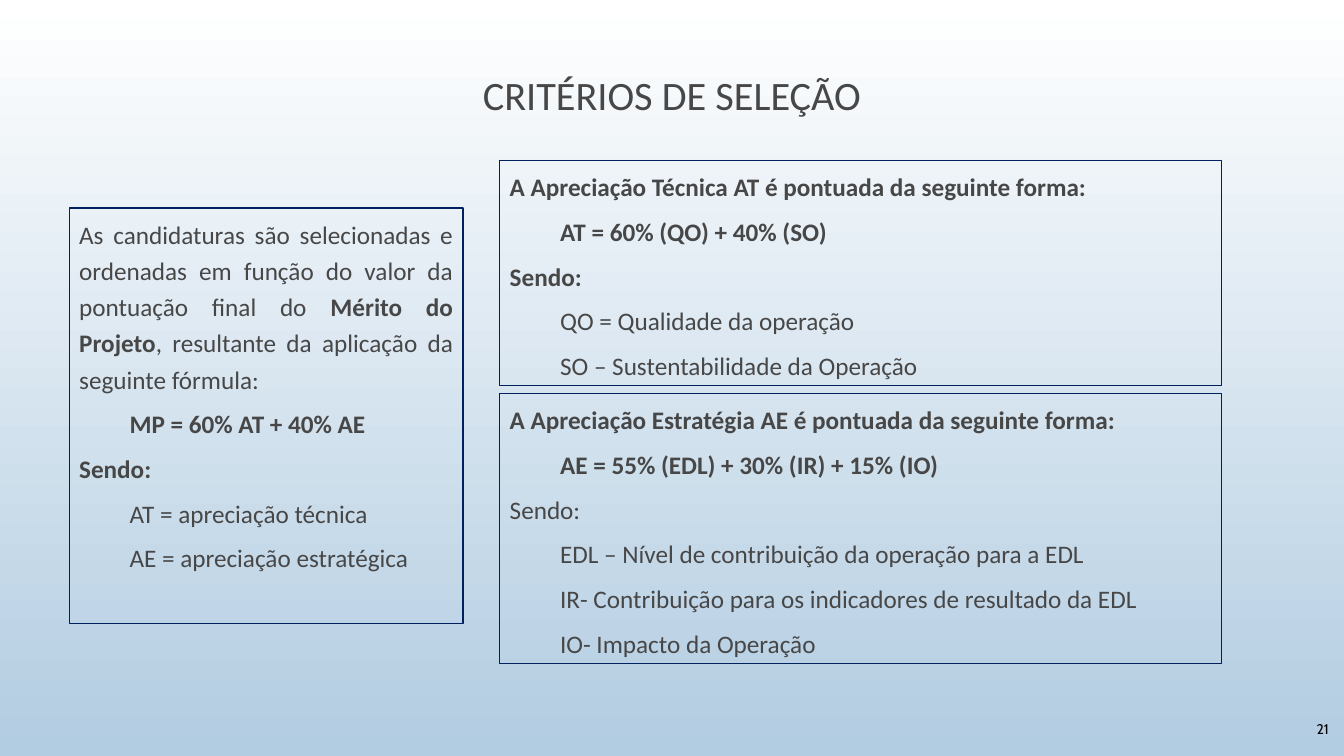
from pptx import Presentation
from pptx.dml.color import RGBColor
from pptx.enum.shapes import MSO_SHAPE
from pptx.enum.text import MSO_ANCHOR, MSO_AUTO_SIZE, PP_ALIGN
from pptx.util import Emu, Pt

PX = 9525
RECTANGLE = MSO_SHAPE.RECTANGLE
TOP, MIDDLE = MSO_ANCHOR.TOP, MSO_ANCHOR.MIDDLE
FIXED_SIZE = MSO_AUTO_SIZE.NONE
CENTER, RIGHT, JUSTIFY = PP_ALIGN.CENTER, PP_ALIGN.RIGHT, PP_ALIGN.JUSTIFY

GREY, NAVY, BLACK = "474747", "002060", "000000"
INDENT = 48
RIGHT_LEFT, RIGHT_WIDTH = 476, 687

# Each paragraph: indented, bold, text
AT_LINES = [
    (False, True, "A Apreciação Técnica AT é pontuada da seguinte forma:"),
    (True, True, "AT = 60% (QO) + 40% (SO)"),
    (False, True, "Sendo:"),
    (True, False, "QO = Qualidade da operação"),
    (True, False, "SO – Sustentabilidade da Operação"),
]
AE_LINES = [
    (False, True, "A Apreciação Estratégia AE é pontuada da seguinte forma:"),
    (True, True, "AE = 55% (EDL) + 30% (IR) + 15% (IO)"),
    (False, False, "Sendo:"),
    (True, False, "EDL – Nível de contribuição da operação para a EDL"),
    (True, False, "IR- Contribuição para os indicadores de resultado da EDL"),
    (True, False, "IO- Impacto da Operação"),
]
MERIT_LINES = [
    (False, False, "As candidaturas são selecionadas e ordenadas em função do "
                   "valor da pontuação final do **Mérito do Projeto**, "
                   "resultante da aplicação da seguinte fórmula:"),
    (True, True, "MP = 60% AT + 40% AE"),
    (False, True, "Sendo:"),
    (True, False, "AT = apreciação técnica"),
    (True, False, "AE = apreciação estratégica"),
]


def px(length):
    return Emu(length * PX)


def color(value):
    return RGBColor.from_string(value)


def set_font(font, name, size, value):
    font.name = name
    font.size = Pt(size)
    font.color.rgb = color(value)


def paint_background(page):
    fill = page.background.fill
    fill.gradient()
    fill.gradient_angle = 270
    for stop, (position, value) in zip(fill.gradient_stops, [(0, "FFFFFF"), (1, "B2CCE1")]):
        stop.position = position
        stop.color.rgb = color(value)


def add_title(page, text):
    title = page.shapes.title
    title.left, title.top, title.width, title.height = map(px, (96, 65, 1088, 55))
    frame = title.text_frame
    frame.text = text
    frame.vertical_anchor = MIDDLE
    frame.auto_size = FIXED_SIZE
    para = frame.paragraphs[0]
    para.alignment = CENTER
    para.line_spacing = 0.9
    set_font(para.font, "Calibri", 28.8, GREY)


def write_line(para, indented, bold, text):
    """Fill a paragraph; parts between ** marks are bold."""
    if indented:
        para._p.get_or_add_pPr().set("marL", str(px(INDENT)))
    para.alignment = JUSTIFY
    para.line_spacing = 1.2
    para.space_after = Pt(6)
    set_font(para.font, "Calibri", 18, GREY)
    para.font.bold = bold
    for index, part in enumerate(text.split("**")):
        span = para.add_run()
        span.text = part
        if index % 2:
            span.font.bold = True


def add_criteria_box(page, left, top, width, height, line_width, lines):
    box = page.shapes.add_shape(RECTANGLE, *map(px, (left, top, width, height)))
    box.shadow.inherit = False
    box.fill.background()
    box.line.color.rgb = color(NAVY)
    box.line.width = Pt(line_width)
    frame = box.text_frame
    frame.word_wrap = True
    frame.vertical_anchor = TOP
    for index, line in enumerate(lines):
        para = frame.add_paragraph() if index else frame.paragraphs[0]
        write_line(para, *line)


def add_page_number(page, number):
    box = page.shapes.add_textbox(*map(px, (1194, 675, 81, 38)))
    frame = box.text_frame
    frame.word_wrap = True
    frame.vertical_anchor = MIDDLE
    frame.text = number
    para = frame.paragraphs[0]
    para.alignment = RIGHT
    set_font(para.font, "Cabin", 10, BLACK)


def main():
    deck = Presentation()
    deck.slide_width, deck.slide_height = px(1280), px(720)
    page = deck.slides.add_slide(deck.slide_layouts.get_by_name("Title Only"))
    paint_background(page)
    add_title(page, "CRITÉRIOS DE SELEÇÃO")
    add_criteria_box(page, 66, 198, 375, 396, 1, MERIT_LINES)
    add_criteria_box(page, RIGHT_LEFT, 153, RIGHT_WIDTH, 214, 0.75, AT_LINES)
    add_criteria_box(page, RIGHT_LEFT, 375, RIGHT_WIDTH, 257, 0.75, AE_LINES)
    add_page_number(page, "21")
    deck.save("out.pptx")


if __name__ == "__main__":
    main()
